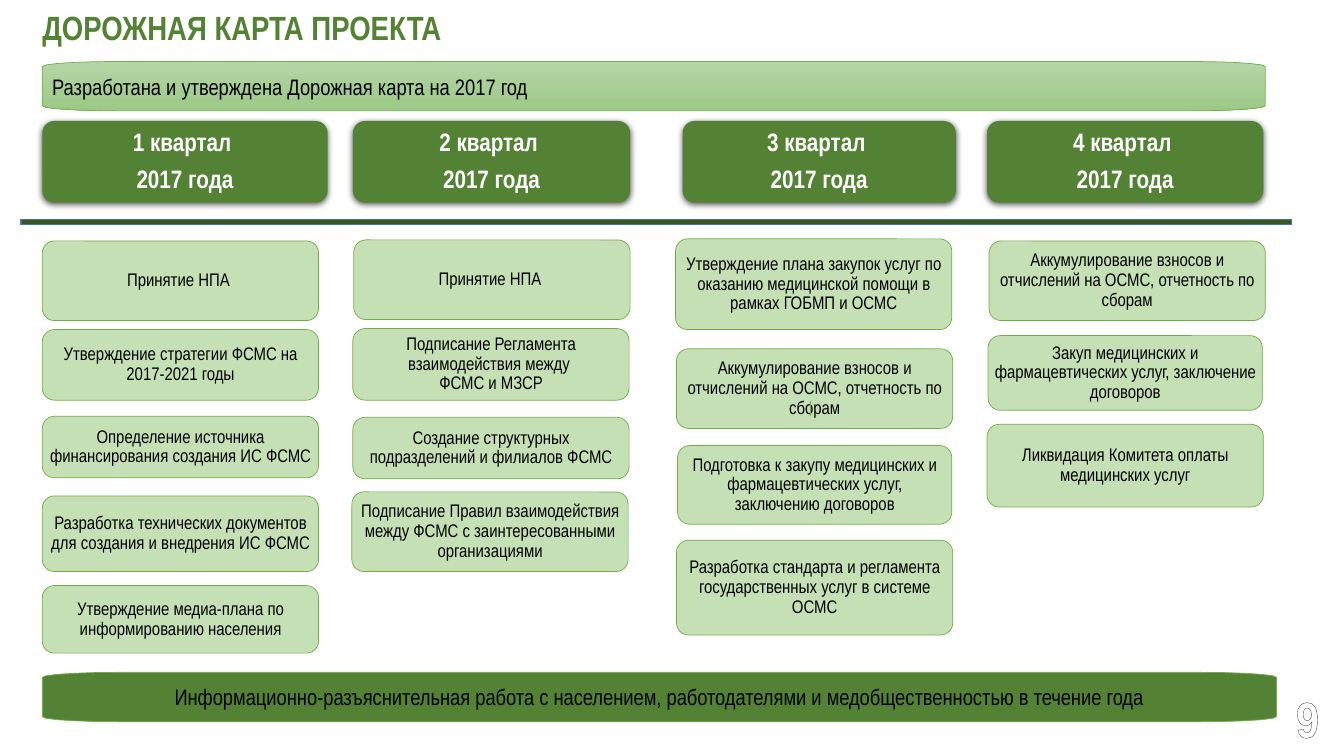
from dataclasses import dataclass
from math import cos, pi, sin

from lxml.etree import SubElement
from pptx import Presentation
from pptx.dml.color import RGBColor
from pptx.enum.shapes import MSO_CONNECTOR, MSO_SHAPE
from pptx.enum.text import MSO_ANCHOR, MSO_AUTO_SIZE, PP_ALIGN
from pptx.oxml import parse_xml
from pptx.oxml.ns import nsdecls, qn
from pptx.shapes.autoshape import Shape
from pptx.slide import Slide
from pptx.text.text import TextFrame
from pptx.util import Inches, Pt

FONT = "Arial Narrow"
DARK_GREEN = RGBColor(0x54, 0x82, 0x35)
PALE_GREEN = RGBColor(0xC5, 0xE0, 0xB4)
EDGE_GREEN = RGBColor(0x70, 0xAD, 0x47)
GRADIENT_TOP = RGBColor(0xB5, 0xD5, 0xA7)
GRADIENT_BOTTOM = RGBColor(0x9C, 0xC9, 0x87)
DIVIDER_GREEN = RGBColor(0x38, 0x57, 0x23)
DIVIDER_BLUE = RGBColor(0x43, 0x73, 0x9E)
BLACK = RGBColor(0, 0, 0)
WHITE = RGBColor(0xFF, 0xFF, 0xFF)

CORNER_STEPS = 5
CORNER_RADIUS = 0.12
BAR_HEIGHT = 0.49
BAR_CORNER_WIDTH = 0.75
BAR_CORNER_HEIGHT = 0.05


@dataclass(frozen=True)
class Task:
    left: float
    top: float
    height: float
    text: str
    width: float = 2.74


@dataclass(frozen=True)
class Quarter:
    left: float
    width: float
    tasks: tuple[Task, ...]


QUARTERS = (
    Quarter(0.42, 2.83, (
        Task(0.42, 2.39, 0.79, "Принятие НПА "),
        Task(0.42, 3.27, 0.7, "Утверждение стратегии ФСМС на 2017-2021 годы"),
        Task(0.42, 4.13, 0.61, "Определение источника финансирования создания ИС ФСМС"),
        Task(0.42, 4.92, 0.75, "Разработка технических документов для создания и внедрения ИС ФСМС"),
        Task(0.42, 5.81, 0.67, "Утверждение медиа-плана по информированию населения"),
    )),
    Quarter(3.5, 2.75, (
        Task(3.51, 2.38, 0.79, "Принятие НПА "),
        Task(3.5, 3.26, 0.71, "Подписание Регламента взаимодействия между \vФСМС и МЗСР"),
        Task(3.5, 4.14, 0.61, "Создание структурных подразделений и филиалов ФСМС"),
        Task(3.49, 4.88, 0.79, "Подписание Правил взаимодействия между ФСМС с заинтересованными организациями"),
    )),
    Quarter(6.77, 2.71, (
        Task(6.7, 2.37, 0.9, "Утверждение плана закупок услуг по оказанию медицинской помощи в рамках ГОБМП и ОСМС"),
        Task(6.71, 3.46, 0.79, "Аккумулирование взносов и отчислений на ОСМС, отчетность по сборам"),
        Task(6.72, 4.42, 0.78, "Подготовка к закупу медицинских и фармацевтических услуг, заключению договоров", 2.72),
        Task(6.71, 5.36, 0.94, "Разработка стандарта и регламента государственных услуг в системе ОСМС"),
    )),
    Quarter(9.79, 2.74, (
        Task(9.81, 2.39, 0.79, "Аккумулирование взносов и отчислений на ОСМС, отчетность по сборам"),
        Task(9.8, 3.33, 0.74, "Закуп медицинских и фармацевтических услуг, заключение договоров", 2.72),
        Task(9.79, 4.21, 0.82, "Ликвидация Комитета оплаты медицинских услуг"),
    )),
)


def write(frame: TextFrame, text: str, size: float, color: RGBColor,
          align: PP_ALIGN = PP_ALIGN.CENTER, bold: bool = False) -> None:
    frame.text = text
    frame.word_wrap = True
    frame.auto_size = MSO_AUTO_SIZE.NONE
    frame.vertical_anchor = MSO_ANCHOR.MIDDLE
    for paragraph in frame.paragraphs:
        paragraph.alignment = align
        for run in paragraph.runs:
            run.font.name = FONT
            run.font.size = Pt(size)
            run.font.bold = bold
            run.font.color.rgb = color


def tighten(frame: TextFrame, size: float, side_inset: float) -> None:
    frame.margin_left = frame.margin_right = Inches(side_inset)
    frame.margin_top = frame.margin_bottom = Inches(0.03)
    for paragraph in frame.paragraphs:
        paragraph.line_spacing = 0.9
        paragraph.space_after = Pt(round(size * 0.4))


def paint(shape: Shape, fill: RGBColor, edge: RGBColor = EDGE_GREEN, weight: float = 0.5) -> None:
    shape.shadow.inherit = False
    shape.fill.solid()
    shape.fill.fore_color.rgb = fill
    shape.line.color.rgb = edge
    shape.line.width = Pt(weight)


def add_card(slide: Slide, task: Task, fill: RGBColor) -> Shape:
    card = slide.shapes.add_shape(MSO_SHAPE.ROUNDED_RECTANGLE, Inches(task.left), Inches(task.top),
                                  Inches(task.width), Inches(task.height))
    card.adjustments[0] = CORNER_RADIUS / task.height
    paint(card, fill)
    return card


def add_bar(slide: Slide, top: float, width: float, fill: RGBColor) -> Shape:
    left = 0.42
    near, far = left + BAR_CORNER_WIDTH, left + width - BAR_CORNER_WIDTH
    high, low = top + BAR_CORNER_HEIGHT, top + BAR_HEIGHT - BAR_CORNER_HEIGHT
    outline = []
    for turn, (x, y) in enumerate(((near, high), (far, high), (far, low), (near, low))):
        for step in range(CORNER_STEPS + 1):
            angle = pi + (turn + step / CORNER_STEPS) * pi / 2
            outline.append((Inches(x + BAR_CORNER_WIDTH * cos(angle)),
                            Inches(y + BAR_CORNER_HEIGHT * sin(angle))))
    builder = slide.shapes.build_freeform(*outline[0])
    builder.add_line_segments(outline[1:], close=True)
    bar = builder.convert_to_shape()
    paint(bar, fill)
    return bar


def add_quarter(slide: Slide, number: int, quarter: Quarter) -> None:
    heading = Task(quarter.left, 1.2, 0.81, f"{number} квартал \n2017 года", quarter.width)
    header = add_card(slide, heading, DARK_GREEN)
    header.line.fill.background()
    header._element.spPr.find(qn("a:effectLst")).append(parse_xml(
        f'<a:outerShdw {nsdecls("a")} blurRad="{Pt(4.5)}" dist="{Pt(1.5)}" dir="5400000" '
        'algn="ctr" rotWithShape="0"><a:srgbClr val="000000"><a:alpha val="63000"/>'
        '</a:srgbClr></a:outerShdw>'))
    write(header.text_frame, heading.text, 18, WHITE, bold=True)
    tighten(header.text_frame, 18, 0.05)
    for task in quarter.tasks:
        card = add_card(slide, task, PALE_GREEN)
        write(card.text_frame, task.text, 13, BLACK)
        tighten(card.text_frame, 13, 0.03)


def add_title(slide: Slide) -> None:
    title = slide.shapes.title
    title.left, title.top = Inches(0.32), Inches(0.04)
    title.width, title.height = Inches(11.85), Inches(0.46)
    write(title.text_frame, "ДОРОЖНАЯ КАРТА ПРОЕКТА", 24, DARK_GREEN, PP_ALIGN.LEFT, True)


def add_bars(slide: Slide) -> None:
    approved = add_bar(slide, 0.61, 12.13, GRADIENT_TOP)
    approved.fill.gradient()
    approved.fill.gradient_angle = 270
    for stop, color in zip(approved.fill.gradient_stops, (GRADIENT_TOP, GRADIENT_BOTTOM)):
        stop.color.rgb = color
    write(approved.text_frame, "Разработана и утверждена Дорожная карта на 2017 год", 16, BLACK, PP_ALIGN.LEFT)
    outreach = add_bar(slide, 6.67, 12.24, DARK_GREEN)
    write(outreach.text_frame,
          "Информационно-разъяснительная работа с населением, работодателями "
          "и медобщественностью в течение года", 16, BLACK)


def add_lines(slide: Slide) -> None:
    divider = slide.shapes.add_shape(MSO_SHAPE.RECTANGLE, Inches(0.21), Inches(2.18), Inches(12.6), Inches(0.05))
    paint(divider, DIVIDER_GREEN, DIVIDER_BLUE, 1)
    link = slide.shapes.add_connector(MSO_CONNECTOR.STRAIGHT, Inches(8.04), Inches(3.98), Inches(8.04), Inches(4.13))
    link.line.color.rgb = EDGE_GREEN
    link.line.width = Pt(0.5)
    SubElement(link._element.spPr, qn("a:effectLst"))


def add_page_number(slide: Slide) -> None:
    page = slide.shapes.add_textbox(Inches(9.79), Inches(6.92), Inches(3.39), Inches(0.4))
    write(page.text_frame, "9", 36, WHITE, PP_ALIGN.RIGHT, True)
    digit = page.text_frame.paragraphs[0].runs[0]
    digit.font._element.insert(0, parse_xml(
        f'<a:ln {nsdecls("a")} w="{Pt(0.8)}"><a:solidFill><a:srgbClr val="404040"/></a:solidFill></a:ln>'))


def main() -> None:
    deck = Presentation()
    deck.slide_width, deck.slide_height = Inches(13.33), Inches(7.5)
    slide = deck.slides.add_slide(deck.slide_layouts[5])
    add_title(slide)
    add_bars(slide)
    for number, quarter in enumerate(QUARTERS, start=1):
        add_quarter(slide, number, quarter)
    add_lines(slide)
    add_page_number(slide)
    deck.save("out.pptx")


if __name__ == "__main__":
    main()
